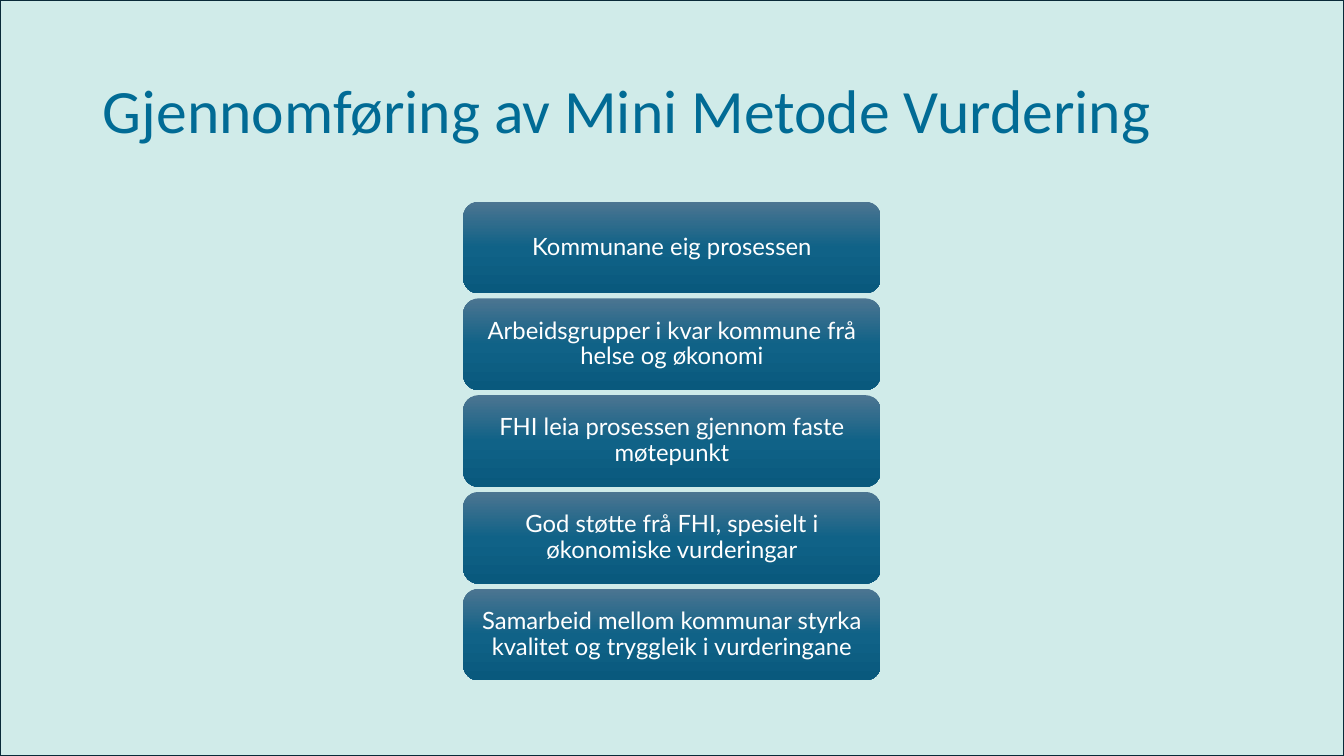
from copy import deepcopy

from lxml import etree
from pptx import Presentation
from pptx import util as u
from pptx.dml.color import RGBColor
from pptx.enum import shapes, text
from pptx.oxml.ns import qn

WIDTH, HEIGHT = u.Inches(13.33), u.Inches(7.5)
COLORS = {
    "backdrop": "66C0B8",
    "frame": "092A39",
    "title": "016B95",
    "step_text": "FFFFFF",
}
STEP_GRADIENT = [(0, "4C7591"), (0.5, "106287"), (1, "09597D")]
STEPS = [
    "Kommunane eig prosessen",
    "Arbeidsgrupper i kvar kommune frå helse og økonomi",
    "FHI leia prosessen gjennom faste møtepunkt",
    "God støtte frå FHI, spesielt i økonomiske vurderingar",
    "Samarbeid mellom kommunar styrka kvalitet og tryggleik i vurderingane",
]
# The steps form one centred column of equal rows
STEP_WIDTH, STEP_HEIGHT = u.Inches(4.14), u.Inches(0.91)
FIRST_ROW, ROW_PITCH = u.Inches(2), u.Inches(0.96)


def rgb(name):
    return RGBColor.from_string(COLORS[name])


def style_paragraph(paragraph, font_name, size, color):
    paragraph.line_spacing = 0.9
    for run in paragraph.runs:
        run.font.name = font_name
        run.font.size = u.Pt(size)
        run.font.color.rgb = rgb(color)


def add_backdrop(slide):
    backdrop = slide.shapes.add_shape(
        shapes.MSO_SHAPE.RECTANGLE, 0, 0, WIDTH, HEIGHT)
    backdrop.shadow.inherit = False
    backdrop.fill.solid()
    backdrop.fill.fore_color.rgb = rgb("backdrop")
    backdrop.line.color.rgb = rgb("frame")
    backdrop.line.width = u.Pt(1.5)
    # 30 % opacity, placed behind the title
    tint = backdrop.element.spPr.find(qn("a:solidFill")).find(qn("a:srgbClr"))
    etree.SubElement(tint, qn("a:alpha"), val="30000")
    slide.shapes.element.insert(2, backdrop.element)


def set_title(slide, wording):
    title = slide.shapes.title
    title.left, title.top = u.Inches(0.92), u.Inches(0.4)
    title.width, title.height = u.Inches(11.5), u.Inches(1.45)
    frame = title.text_frame
    frame.text = wording
    frame.word_wrap = True
    frame.vertical_anchor = text.MSO_ANCHOR.MIDDLE
    frame.paragraphs[0].alignment = text.PP_ALIGN.LEFT
    style_paragraph(frame.paragraphs[0], "Calibri", 44, "title")


def fill_gradient(shape, stops):
    shape.fill.gradient()
    shape.fill.gradient_angle = 270  # from top to bottom
    stop_list = shape.element.spPr.find(qn("a:gradFill")).find(qn("a:gsLst"))
    while len(stop_list) < len(stops):
        stop_list.append(deepcopy(stop_list[0]))
    for stop, (position, color) in zip(shape.fill.gradient_stops, stops):
        stop.position = position
        stop.color.rgb = RGBColor.from_string(color)


def add_step(slide, row, wording):
    step = slide.shapes.add_shape(
        shapes.MSO_SHAPE.ROUNDED_RECTANGLE,
        (WIDTH - STEP_WIDTH) // 2, FIRST_ROW + row * ROW_PITCH,
        STEP_WIDTH, STEP_HEIGHT)
    step.shadow.inherit = False
    step.line.fill.background()
    fill_gradient(step, STEP_GRADIENT)
    frame = step.text_frame
    frame.text = wording
    frame.word_wrap = True
    frame.vertical_anchor = text.MSO_ANCHOR.MIDDLE
    frame.margin_left = frame.margin_right = u.Inches(0.07)
    frame.margin_top = frame.margin_bottom = u.Inches(0.04)
    frame.paragraphs[0].alignment = text.PP_ALIGN.CENTER
    style_paragraph(frame.paragraphs[0], "Lato", 17, "step_text")


def main():
    deck = Presentation()
    deck.slide_width, deck.slide_height = WIDTH, HEIGHT
    slide = deck.slides.add_slide(deck.slide_layouts[5])

    # Tinted background and heading
    add_backdrop(slide)
    set_title(slide, "Gjennomføring av Mini Metode Vurdering")

    # Column of steps
    for row, wording in enumerate(STEPS):
        add_step(slide, row, wording)

    deck.save("out.pptx")


if __name__ == "__main__":
    main()
